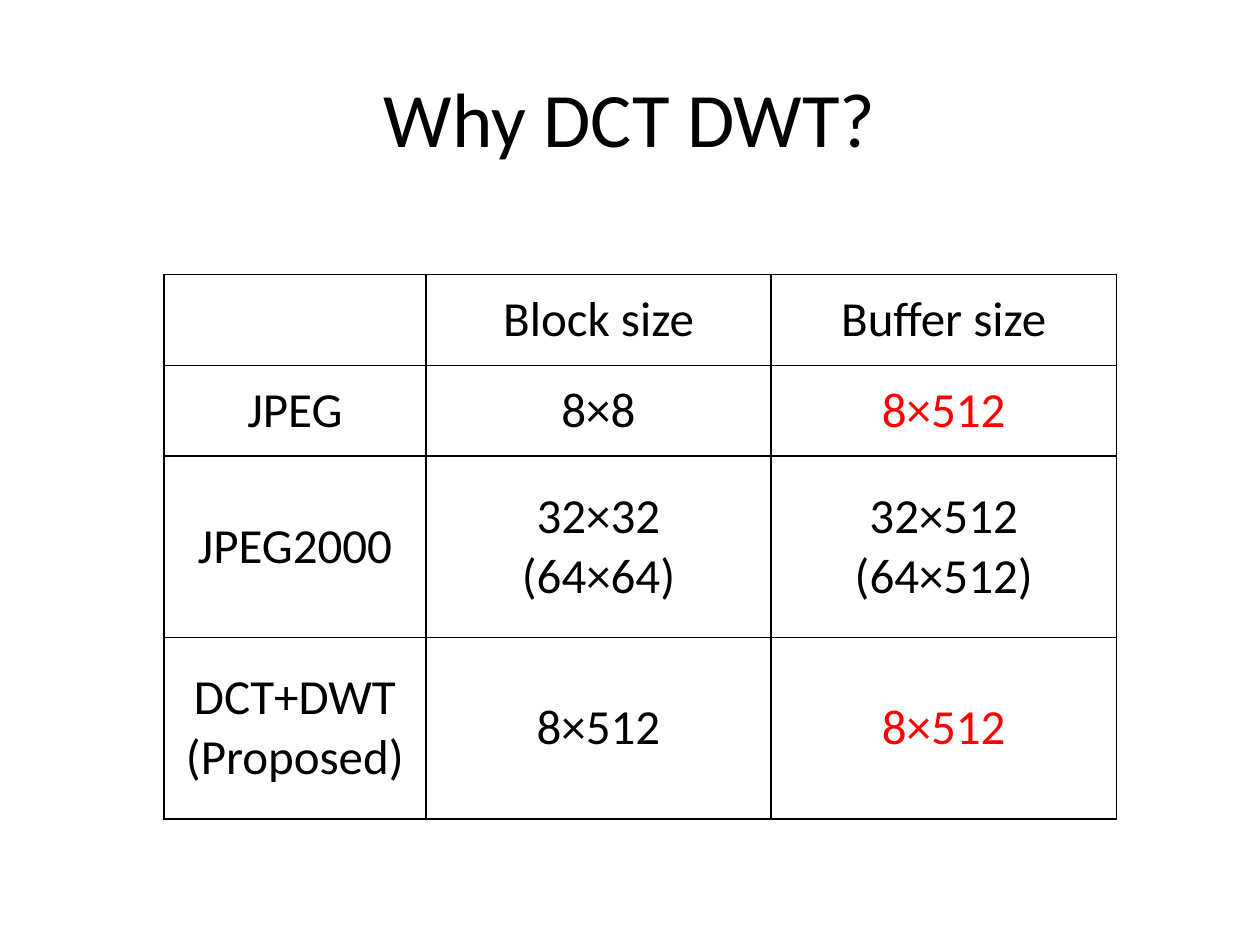
from lxml import etree
from pptx import Presentation
from pptx.dml.color import RGBColor
from pptx.enum import text
from pptx.oxml.ns import qn
from pptx.util import Inches, Pt

COLORS = {"ink": "000000", "paper": "FFFFFF", "highlight": "FF0000"}
ROW_HEIGHT = 0.72
COLUMN_WIDTHS = [2.08, 2.74, 2.74]
ROW_SPANS = [1, 1, 2, 2]
ROWS = [
    ["", "Block size", "Buffer size"],
    ["JPEG", "8×8", "8×512"],
    ["JPEG2000", "32×32\n(64×64)", "32×512\n(64×512)"],
    ["DCT+DWT\n(Proposed)", "8×512", "8×512"],
]
HIGHLIGHTED = {(1, 2), (3, 2)}
CELL_FORMAT = {
    "vertical_anchor": text.MSO_ANCHOR.MIDDLE,
    "margin_left": Inches(0.07),
    "margin_right": Inches(0.07),
    "margin_top": 0,
    "margin_bottom": 0,
}


def style_text(frame, size, color):
    for paragraph in frame.paragraphs:
        paragraph.alignment = text.PP_ALIGN.CENTER
        font_format = {"name": "Calibri", "size": Pt(size)}
        for name, value in font_format.items():
            setattr(paragraph.font, name, value)
        paragraph.font.color.rgb = RGBColor.from_string(COLORS[color])


def add_borders(cell):
    properties = cell._tc.get_or_add_tcPr()
    for position, side in enumerate(["a:lnL", "a:lnR", "a:lnT", "a:lnB"]):
        line = etree.Element(qn(side), w=str(Pt(1)))
        fill = etree.SubElement(line, qn("a:solidFill"))
        etree.SubElement(fill, qn("a:srgbClr"), val=COLORS["ink"])
        properties.insert(position, line)


presentation = Presentation()
presentation.slide_width = Inches(10)
presentation.slide_height = Inches(7.5)
slide = presentation.slides.add_slide(presentation.slide_layouts[6])
width, height = presentation.slide_width, presentation.slide_height

# Title
title = slide.shapes.add_textbox(
    int(width * 0.05), int(height * 0.04), int(width * 0.9), Inches(1.25)
)
frame = title.text_frame
frame.word_wrap = True
frame.vertical_anchor = text.MSO_ANCHOR.MIDDLE
frame.text = "Why DCT DWT?"
style_text(frame, 44, "ink")

# Comparison table
table = slide.shapes.add_table(
    len(ROWS), len(COLUMN_WIDTHS), Inches(1.3), Inches(2.18),
    Inches(sum(COLUMN_WIDTHS)), Inches(ROW_HEIGHT * sum(ROW_SPANS)),
).table
table.first_row = table.horz_banding = False
for column, column_width in zip(table.columns, COLUMN_WIDTHS):
    column.width = Inches(column_width)
for row, span in zip(table.rows, ROW_SPANS):
    row.height = Inches(ROW_HEIGHT * span)

# Cell contents and borders
for row_index, row_texts in enumerate(ROWS):
    for column_index, cell_text in enumerate(row_texts):
        cell = table.cell(row_index, column_index)
        cell.text = cell_text
        for name, value in CELL_FORMAT.items():
            setattr(cell, name, value)
        cell.fill.solid()
        cell.fill.fore_color.rgb = RGBColor.from_string(COLORS["paper"])
        highlighted = (row_index, column_index) in HIGHLIGHTED
        style_text(cell.text_frame, 28, "highlight" if highlighted else "ink")
        add_borders(cell)

presentation.save("out.pptx")
